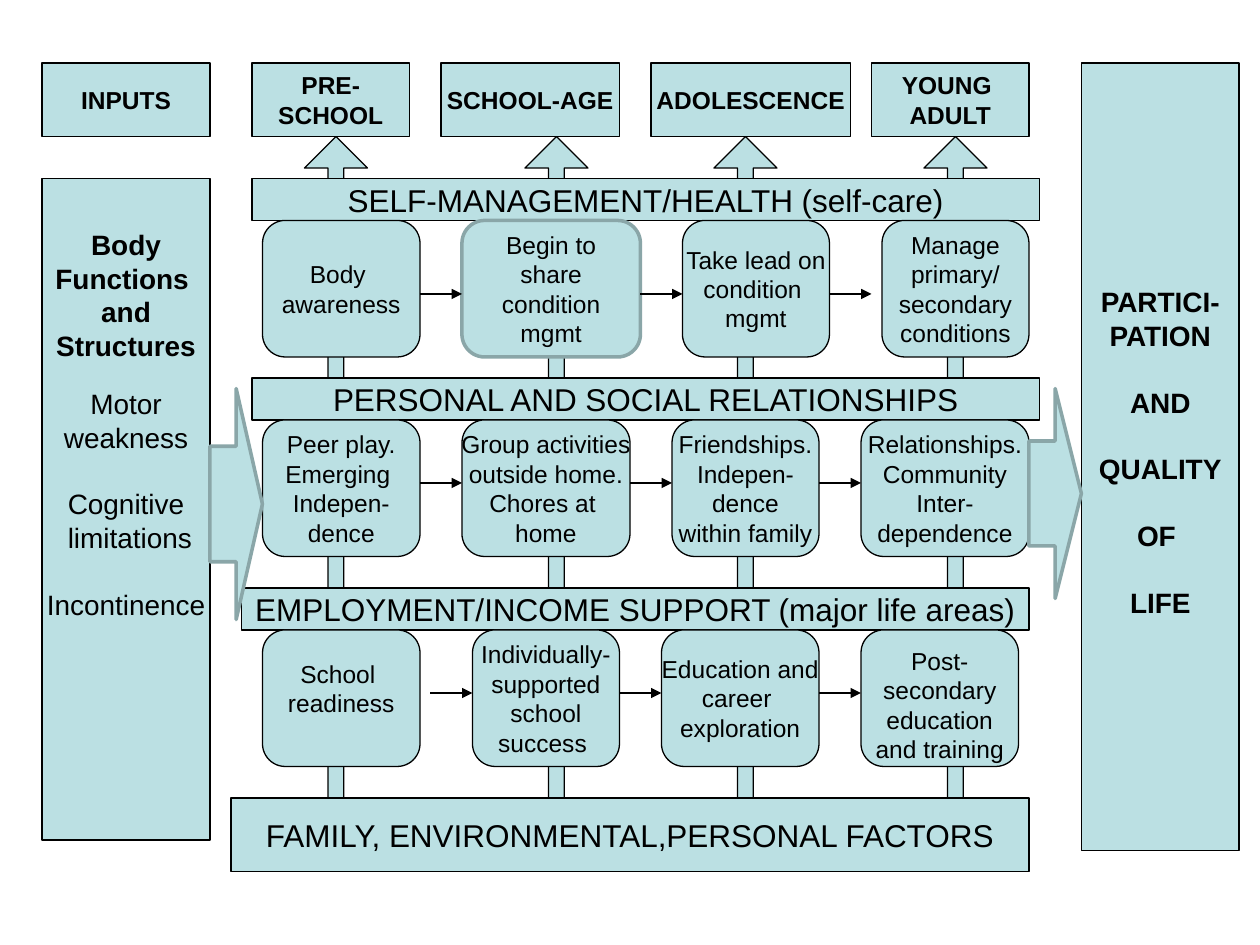
from dataclasses import dataclass

from lxml.etree import SubElement
from pptx import Presentation
from pptx.dml.color import RGBColor
from pptx.enum.shapes import MSO_CONNECTOR as Connector, MSO_SHAPE as Shape
from pptx.enum.text import MSO_ANCHOR as Anchor, PP_ALIGN as Align
from pptx.oxml.ns import qn
from pptx.util import Inches, Length, Pt


@dataclass(frozen=True)
class Theme:
    font: str = "Arial"
    fill: RGBColor = RGBColor(0xBB, 0xE0, 0xE3)
    ink: RGBColor = RGBColor(0, 0, 0)
    accent: RGBColor = RGBColor(0x8A, 0xA6, 0xA8)
    thin: float = 0.75
    thick: float = 2
    card_size: int = 14
    panel_size: int = 16
    band_size: int = 18


THEME = Theme()


# Places are counted in twelfths of an inch.
@dataclass(frozen=True)
class Area:
    left: int
    top: int
    width: int
    height: int


@dataclass(frozen=True)
class Card:
    left: int
    width: int
    text: str
    inset_top: float = 0.05
    inset_bottom: float = 0.05
    highlight: bool = False


@dataclass(frozen=True)
class Row:
    top: int
    arrow_y: int
    arrow_ends: tuple[int, ...]
    cards: tuple[Card, ...]


@dataclass(frozen=True)
class Group:
    text: str
    bold: bool = True
    gap: float = 0


CARD_HEIGHT = 13
ARROW_LENGTH = 4
STEM_LEFTS = (88, 68, 50, 29)
HEADERS = ((24, 15, "PRE-\nSCHOOL"), (42, 17, "SCHOOL-AGE"),
           (62, 19, "ADOLESCENCE"), (83, 15, "YOUNG \nADULT"), (4, 16, "INPUTS"))
BANDS = (
    (Area(24, 17, 75, 4), "SELF-MANAGEMENT/HEALTH (self-care)"),
    (Area(24, 36, 75, 4), "PERSONAL AND SOCIAL RELATIONSHIPS"),
    (Area(23, 56, 75, 4), "EMPLOYMENT/INCOME SUPPORT (major life areas)"),
    (Area(22, 76, 76, 7), "FAMILY, ENVIRONMENTAL,PERSONAL FACTORS"),
)
BODY_GROUPS = (
    Group("Body\nFunctions \nand\nStructures"),
    Group("Motor\nweakness", bold=False, gap=14),
    Group("Cognitive\n limitations", bold=False, gap=19),
    Group("Incontinence", bold=False, gap=19),
)
OUTCOME_GROUPS = (Group("PARTICI-\nPATION"),
                  *(Group(word, gap=19) for word in ("AND", "QUALITY", "OF ", "LIFE")))
ROWS = (
    Row(21, 28, (44, 65, 83), (
        Card(25, 15, "Body \nawareness"),
        Card(44, 17, "Begin to share condition\nmgmt", highlight=True),
        Card(65, 14, "Take lead on\ncondition \nmgmt"),
        Card(84, 14, "Manage\nprimary/\nsecondary\nconditions"),
    )),
    Row(40, 46, (44, 64, 82), (
        Card(25, 15, "Peer play.\nEmerging \nIndepen-\ndence"),
        Card(44, 16, "Group activities\noutside home.\nChores at \nhome"),
        Card(64, 14, "Friendships.\nIndepen-\ndence\nwithin family"),
        Card(82, 16, "Relationships.\nCommunity\nInter-\ndependence"),
    )),
    Row(60, 66, (45, 63, 82), (
        Card(25, 15, "School \nreadiness", inset_bottom=0.21),
        Card(45, 14, "Individually-\nsupported\nschool\nsuccess "),
        Card(63, 15, "Education and\ncareer \nexploration"),
        Card(82, 15, "Post-\nsecondary\neducation\nand training",
             inset_top=0.1, inset_bottom=0),
    )),
)


def grid(steps: float) -> Length:
    return Inches(steps / 12)


def add_box(page, kind, area: Area, highlight: bool = False):
    box = page.shapes.add_shape(kind, grid(area.left), grid(area.top),
                                grid(area.width), grid(area.height))
    box.shadow.inherit = False
    box.fill.solid()
    box.fill.fore_color.rgb = THEME.fill
    box.line.color.rgb = THEME.accent if highlight else THEME.ink
    box.line.width = Pt(THEME.thick if highlight else THEME.thin)
    return box


def put_text(box, text: str, *, size: int, bold: bool = False, gap: float = 0,
             wrap: bool = False, anchor=Anchor.MIDDLE,
             inset_top: float = 0.05, inset_bottom: float = 0.05) -> None:
    """Append centred lines to a box; the gap goes above the first of them."""
    frame = box.text_frame
    frame.word_wrap = wrap
    frame.vertical_anchor = anchor
    frame.margin_top, frame.margin_bottom = Inches(inset_top), Inches(inset_bottom)
    for index, line in enumerate(text.split("\n")):
        para = frame.add_paragraph() if frame.text else frame.paragraphs[0]
        para.alignment = Align.CENTER
        if index == 0 and gap:
            para.space_before = Pt(gap)
        span = para.add_run()
        span.text = line
        span.font.name, span.font.size, span.font.bold = THEME.font, Pt(size), bold
        span.font.color.rgb = THEME.ink


def add_panel(page, area: Area, groups: tuple[Group, ...], inset_top: float) -> None:
    panel = add_box(page, Shape.RECTANGLE, area)
    for group in groups:
        put_text(panel, group.text, size=THEME.panel_size, bold=group.bold,
                 gap=group.gap, anchor=Anchor.TOP, inset_top=inset_top)


def add_card(page, card: Card, top: int) -> None:
    kind = Shape.FLOWCHART_ALTERNATE_PROCESS if card.highlight else Shape.ROUNDED_RECTANGLE
    box = add_box(page, kind, Area(card.left, top, card.width, CARD_HEIGHT), card.highlight)
    put_text(box, card.text, size=THEME.card_size, wrap=card.highlight,
             inset_top=card.inset_top, inset_bottom=card.inset_bottom)


def add_arrow(page, end: int, y: int) -> None:
    arrow = page.shapes.add_connector(Connector.STRAIGHT, grid(end - ARROW_LENGTH), grid(y),
                                      grid(end), grid(y))
    arrow.line.color.rgb = THEME.ink
    arrow.line.width = Pt(THEME.thin)
    SubElement(arrow.line._get_or_add_ln(), qn("a:tailEnd"), type="triangle")
    SubElement(arrow._element.spPr, qn("a:effectLst"))


def main() -> None:
    deck = Presentation()
    deck.slide_width, deck.slide_height = Inches(10), Inches(7.5)
    page = deck.slides.add_slide(deck.slide_layouts[6])

    # Upward arrows behind everything
    for left in STEM_LEFTS:
        stem = add_box(page, Shape.UP_ARROW, Area(left, 13, 6, 63))
        stem.adjustments[0], stem.adjustments[1] = 0.25, 0.5

    # Age headers
    for left, width, title in HEADERS:
        header = add_box(page, Shape.RECTANGLE, Area(left, 6, width, 7))
        put_text(header, title, size=THEME.card_size, bold=True)

    # Side panels and life-area bands
    add_panel(page, Area(4, 17, 16, 63), BODY_GROUPS, inset_top=0.39)
    for area, title in BANDS:
        put_text(add_box(page, Shape.RECTANGLE, area), title, size=THEME.band_size)
    add_panel(page, Area(103, 6, 15, 75), OUTCOME_GROUPS, inset_top=1.76)

    # Stage cards and the arrows between them
    for row in ROWS:
        for card in row.cards:
            add_card(page, card, row.top)
        for end in row.arrow_ends:
            add_arrow(page, end, row.arrow_y)

    # Wide arrows from inputs to stages to outcome
    for area in (Area(20, 37, 5, 22), Area(98, 37, 5, 20)):
        add_box(page, Shape.RIGHT_ARROW, area, highlight=True)

    deck.save("out.pptx")


if __name__ == "__main__":
    main()
